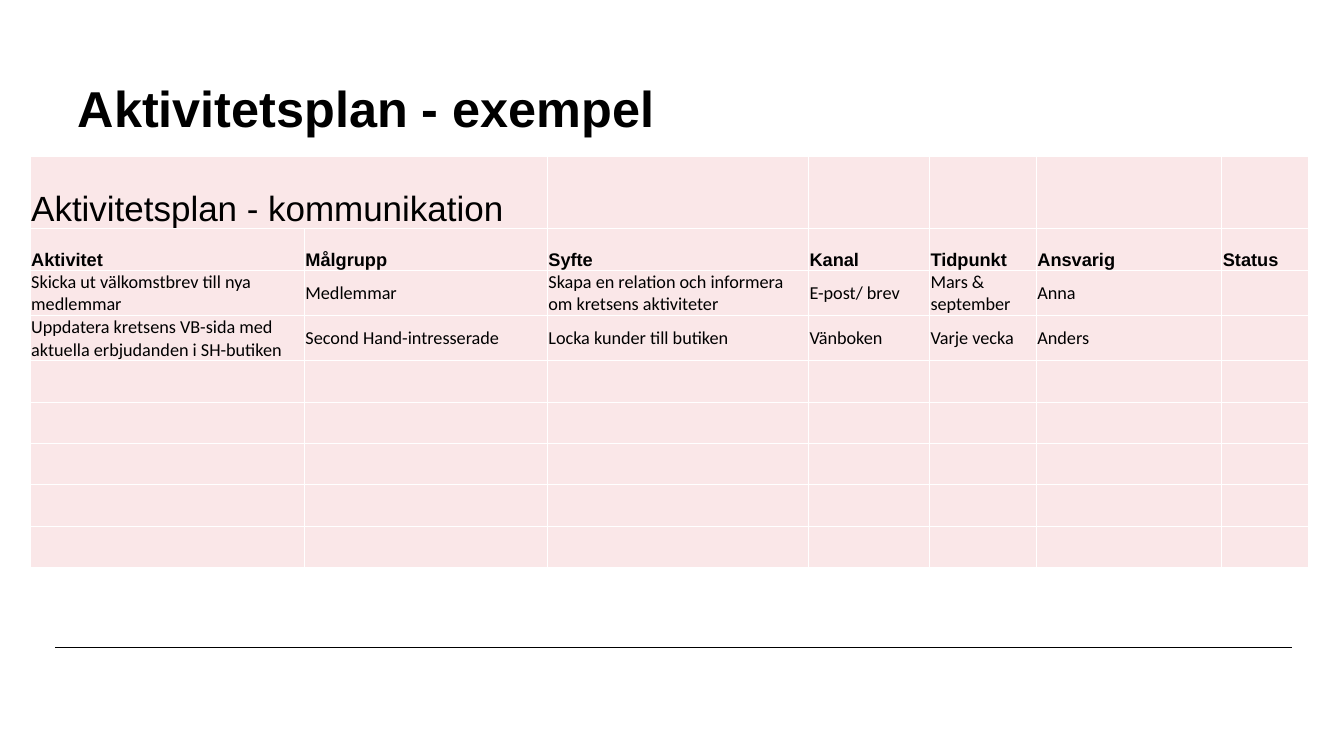
"""Build the slide with an example activity plan for communication."""
from lxml import etree
from pptx import Presentation
from pptx.dml.color import RGBColor
from pptx.enum.shapes import MSO_CONNECTOR
from pptx.enum.text import MSO_ANCHOR, MSO_AUTO_SIZE, PP_ALIGN
from pptx.oxml import parse_xml
from pptx.oxml.ns import nsdecls, qn
from pptx.util import Inches, Pt

BLACK = RGBColor(0x00, 0x00, 0x00)
WHITE = RGBColor(0xFF, 0xFF, 0xFF)
PINK = RGBColor(0xFA, 0xE7, 0xE8)
LEFT = PP_ALIGN.LEFT
MIDDLE, BOTTOM = MSO_ANCHOR.MIDDLE, MSO_ANCHOR.BOTTOM
NO_AUTOFIT = MSO_AUTO_SIZE.NONE
STRAIGHT = MSO_CONNECTOR.STRAIGHT

COLUMN_WIDTHS = [2.72, 2.41, 2.59, 1.2, 1.06, 1.84, 0.86]
ROW_HEIGHTS = [0.72] + [0.41] * 8
PLAN = [
    ["Aktivitetsplan - kommunikation"],
    ["Aktivitet", "Målgrupp", "Syfte", "Kanal", "Tidpunkt", "Ansvarig", "Status"],
    ["Skicka ut välkomstbrev till nya medlemmar", "Medlemmar",
     "Skapa en relation och informera om kretsens aktiviteter",
     "E-post/ brev", "Mars & september", "Anna"],
    ["Uppdatera kretsens VB-sida med aktuella erbjudanden i SH-butiken",
     "Second Hand-intresserade", "Locka kunder till butiken",
     "Vänboken", "Varje vecka", "Anders"],
]
BODY_FORMAT = {"size": 13, "font": "Calibri"}
ROW_FORMATS = {0: {"size": 25}, 1: {"size": 13, "bold": True}}


def write_text(frame, text, size, font="Arial", bold=False, line_spacing=1.0):
    paragraph = frame.paragraphs[0]
    paragraph.alignment = LEFT
    paragraph.line_spacing = line_spacing
    run = paragraph.add_run()
    run.text = text
    run.font.size = Pt(size)
    run.font.name = font
    run.font.bold = bold
    run.font.color.rgb = BLACK


def format_cell(cell, anchor):
    cell.margin_left = cell.margin_right = cell.margin_top = Inches(0.01)
    cell.margin_bottom = 0
    cell.vertical_anchor = anchor
    for side in ("lnL", "lnR", "lnT", "lnB"):
        cell._tc.get_or_add_tcPr().append(parse_xml(
            f'<a:{side} {nsdecls("a")} w="{Pt(1)}"><a:solidFill>'
            f'<a:srgbClr val="{WHITE}"/></a:solidFill></a:{side}>'))
    cell.fill.solid()
    cell.fill.fore_color.rgb = PINK


presentation = Presentation()
presentation.slide_width = Inches(13.33)
presentation.slide_height = Inches(7.5)
slide = presentation.slides.add_slide(presentation.slide_layouts[5])

footer_line = slide.shapes.add_connector(
    STRAIGHT, Inches(0.55), Inches(6.42), Inches(12.81), Inches(6.42))
footer_line.line.color.rgb = BLACK
footer_line.line.width = Pt(0.5)
etree.SubElement(footer_line._element.spPr, qn("a:effectLst"))

title = slide.shapes.title
title.left, title.top = Inches(0.73), Inches(0.82)
title.width, title.height = Inches(10.69), Inches(0.56)
title_frame = title.text_frame
title_frame.auto_size = NO_AUTOFIT
title_frame.vertical_anchor = MIDDLE
title_frame.margin_left = Inches(0.04)
write_text(title_frame, "Aktivitetsplan - exempel", size=36, bold=True, line_spacing=0.9)

table = slide.shapes.add_table(
    len(ROW_HEIGHTS), len(COLUMN_WIDTHS), Inches(0.3), Inches(1.55),
    Inches(sum(COLUMN_WIDTHS)), Inches(sum(ROW_HEIGHTS))).table
table.first_row = False
table.horz_banding = False
for column, width in zip(table.columns, COLUMN_WIDTHS):
    column.width = Inches(width)
for row_index, height in enumerate(ROW_HEIGHTS):
    row = table.rows[row_index]
    row.height = Inches(height)
    for cell in row.cells:
        format_cell(cell, BOTTOM if row_index in ROW_FORMATS else MIDDLE)
for row_index, texts in enumerate(PLAN):
    for column_index, text in enumerate(texts):
        write_text(table.cell(row_index, column_index).text_frame, text,
                   **ROW_FORMATS.get(row_index, BODY_FORMAT))
table.cell(0, 0).merge(table.cell(0, 1))

presentation.save("out.pptx")
